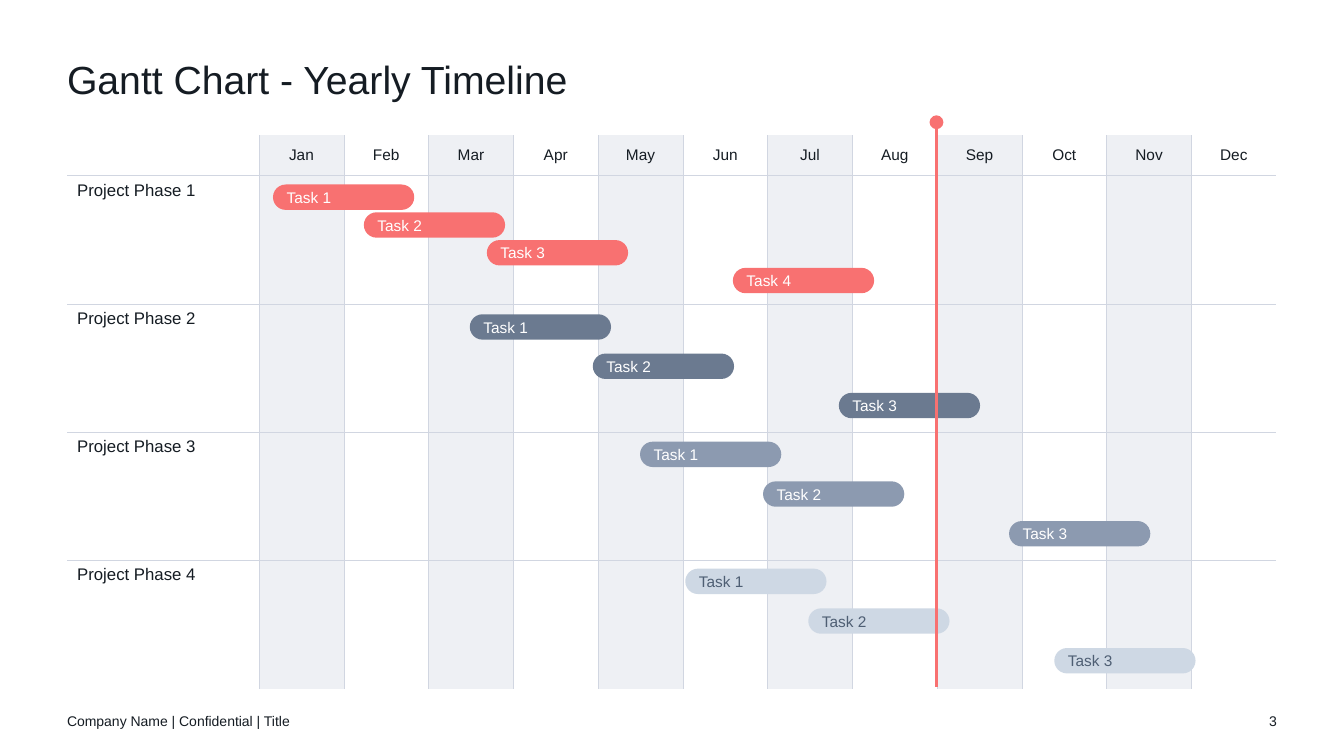
"""Build a yearly Gantt chart slide with phases, task bars and a date marker."""
from dataclasses import dataclass
from itertools import product

from lxml import etree
from pptx import Presentation
from pptx import util as u
from pptx.dml import color
from pptx.enum import shapes, text
from pptx.oxml import ns


@dataclass(frozen=True)
class Theme:
    font: str = "Arial"
    ink: str = "151C23"
    grid: str = "D1D6E1"
    band: str = "EEF0F4"
    accent: str = "F87171"
    white: str = "FFFFFF"
    slate: str = "6B7A90"
    steel: str = "8C9AB0"
    mist: str = "CED8E4"
    mist_ink: str = "4E5E73"
    title_size: int = 28
    phase_size: int = 12
    label_size: int = 11
    footer_size: int = 10


THEME = Theme()
MONTHS = "Jan Feb Mar Apr May Jun Jul Aug Sep Oct Nov Dec".split()
LEFT, TOP, WIDTH = 1.69, 3.41, 30.48
PHASE_WIDTH, HEADER_HEIGHT, PHASE_HEIGHT = 4.84, 1.02, 3.23
MONTH_WIDTH = (WIDTH - PHASE_WIDTH) / len(MONTHS)
BAR_WIDTH, BAR_HEIGHT = 3.56, 0.64
NO_MARGINS = dict.fromkeys(("margin_left", "margin_right", "margin_top", "margin_bottom"), 0)
MIDDLE = {"vertical_anchor": text.MSO_ANCHOR.MIDDLE}
HEADER_CELL = {"margin_left": 0, "margin_right": 0, **MIDDLE}
COMMON_OFFSETS = (0, 3.1, 9.3)
PHASES = [
    {"start": (6.88, 4.65), "step": 0.7, "offsets": (0, 2.29, 5.39, 11.59),
     "fill": THEME.accent, "ink": THEME.white},
    {"start": (11.84, 7.92), "step": 0.99, "offsets": COMMON_OFFSETS,
     "fill": THEME.slate, "ink": THEME.white},
    {"start": (16.13, 11.13), "step": 1, "offsets": COMMON_OFFSETS,
     "fill": THEME.steel, "ink": THEME.white},
    {"start": (17.27, 14.33), "step": 1, "offsets": COMMON_OFFSETS,
     "fill": THEME.mist, "ink": THEME.mist_ink},
]


def apply_format(target, values):
    for name, value in values.items():
        setattr(target, name, value)


def box(left, top, width, height):
    return [u.Cm(length) for length in (left, top, width, height)]


def paint(fill, rgb):
    fill.solid()
    fill.fore_color.rgb = color.RGBColor.from_string(rgb)


def write(frame, content, size, ink=THEME.ink, **paragraph_format):
    paragraph = frame.paragraphs[0]
    apply_format(paragraph, paragraph_format)
    run = paragraph.add_run()
    run.text = content
    apply_format(run.font, {"name": THEME.font, "size": u.Pt(size)})
    run.font.color.rgb = color.RGBColor.from_string(ink)


def add_text(slide, place, content, size, frame_format, **paragraph_format):
    frame = slide.shapes.add_textbox(*box(*place)).text_frame
    apply_format(frame, {"word_wrap": True, **NO_MARGINS, **frame_format})
    write(frame, content, size, **paragraph_format)


def set_borders(cell, visible_sides):
    properties = cell._tc.get_or_add_tcPr()
    for index, side in enumerate("LRTB"):
        line = etree.Element(ns.qn(f"a:ln{side}"), w=str(u.Pt(0.5)))
        if side in visible_sides:
            fill = etree.SubElement(line, ns.qn("a:solidFill"))
            etree.SubElement(fill, ns.qn("a:srgbClr"), val=THEME.grid)
        else:
            etree.SubElement(line, ns.qn("a:noFill"))
        properties.insert(index, line)


def add_calendar(slide):
    last_row, last_column = len(PHASES), len(MONTHS)
    height = HEADER_HEIGHT + last_row * PHASE_HEIGHT
    frame = slide.shapes.add_table(last_row + 1, last_column + 1, *box(LEFT, TOP, WIDTH, height))
    table = frame.table
    apply_format(table, {"first_row": False, "horz_banding": False})
    for index, column in enumerate(table.columns):
        column.width = u.Cm(MONTH_WIDTH if index else PHASE_WIDTH)
    for index, row in enumerate(table.rows):
        row.height = u.Cm(PHASE_HEIGHT if index else HEADER_HEIGHT)
    for row, column in product(range(last_row + 1), range(last_column + 1)):
        cell = table.cell(row, column)
        if column % 2:
            paint(cell.fill, THEME.band)
        else:
            cell.fill.background()
        inner = {"L": column > 0, "R": column < last_column, "T": row > 0, "B": row < last_row}
        set_borders(cell, [side for side, shown in inner.items() if shown])
    for index, month in enumerate(MONTHS, 1):
        cell = table.cell(0, index)
        apply_format(cell, HEADER_CELL)
        write(cell.text_frame, month, THEME.label_size, alignment=text.PP_ALIGN.CENTER)
    for index in range(1, last_row + 1):
        write(table.cell(index, 0).text_frame, f"Project Phase {index}", THEME.phase_size)


def add_task(slide, left, top, label, fill, ink):
    place = box(left, top, BAR_WIDTH, BAR_HEIGHT)
    shape = slide.shapes.add_shape(shapes.MSO_SHAPE.ROUNDED_RECTANGLE, *place)
    shape.adjustments[0] = 0.5
    shape.shadow.inherit = False
    paint(shape.fill, fill)
    shape.line.fill.background()
    apply_format(shape.text_frame, MIDDLE)
    write(shape.text_frame, label, THEME.label_size, ink, alignment=text.PP_ALIGN.LEFT)


def add_phase_tasks(slide, phase):
    left, top = phase["start"]
    for index, offset in enumerate(phase["offsets"]):
        add_task(slide, left + offset, top + index * phase["step"],
                 f"Task {index + 1}", phase["fill"], phase["ink"])


def add_date_marker(slide, x, top, bottom):
    ends = box(x, top, x, bottom)
    connector = slide.shapes.add_connector(shapes.MSO_CONNECTOR.STRAIGHT, *ends)
    connector.line.width = u.Pt(1.5)
    paint(connector.line.fill, THEME.accent)
    etree.SubElement(connector.line._get_or_add_ln(), ns.qn("a:headEnd"),
                     type="oval", w="lg", len="lg")
    etree.SubElement(connector._element.spPr, ns.qn("a:effectLst"))


def main():
    presentation = Presentation()
    apply_format(presentation, {"slide_width": u.Cm(33.87), "slide_height": u.Cm(19.05)})
    slide = presentation.slides.add_slide(presentation.slide_layouts[6])
    add_text(slide, (LEFT, 1.52, WIDTH, 1.52), "Gantt Chart - Yearly Timeline",
             THEME.title_size, {}, line_spacing=0.9)
    add_calendar(slide)
    for phase in PHASES:
        add_phase_tasks(slide, phase)
    add_date_marker(slide, 23.6, 3.08, 17.3)
    add_text(slide, (LEFT, 17.65, 11.43, 1.02), "Company Name | Confidential | Title",
             THEME.footer_size, MIDDLE)
    add_text(slide, (30.91, 17.65, 1.27, 1.02), "3", THEME.footer_size, MIDDLE,
             alignment=text.PP_ALIGN.RIGHT)
    presentation.save("out.pptx")


if __name__ == "__main__":
    main()
